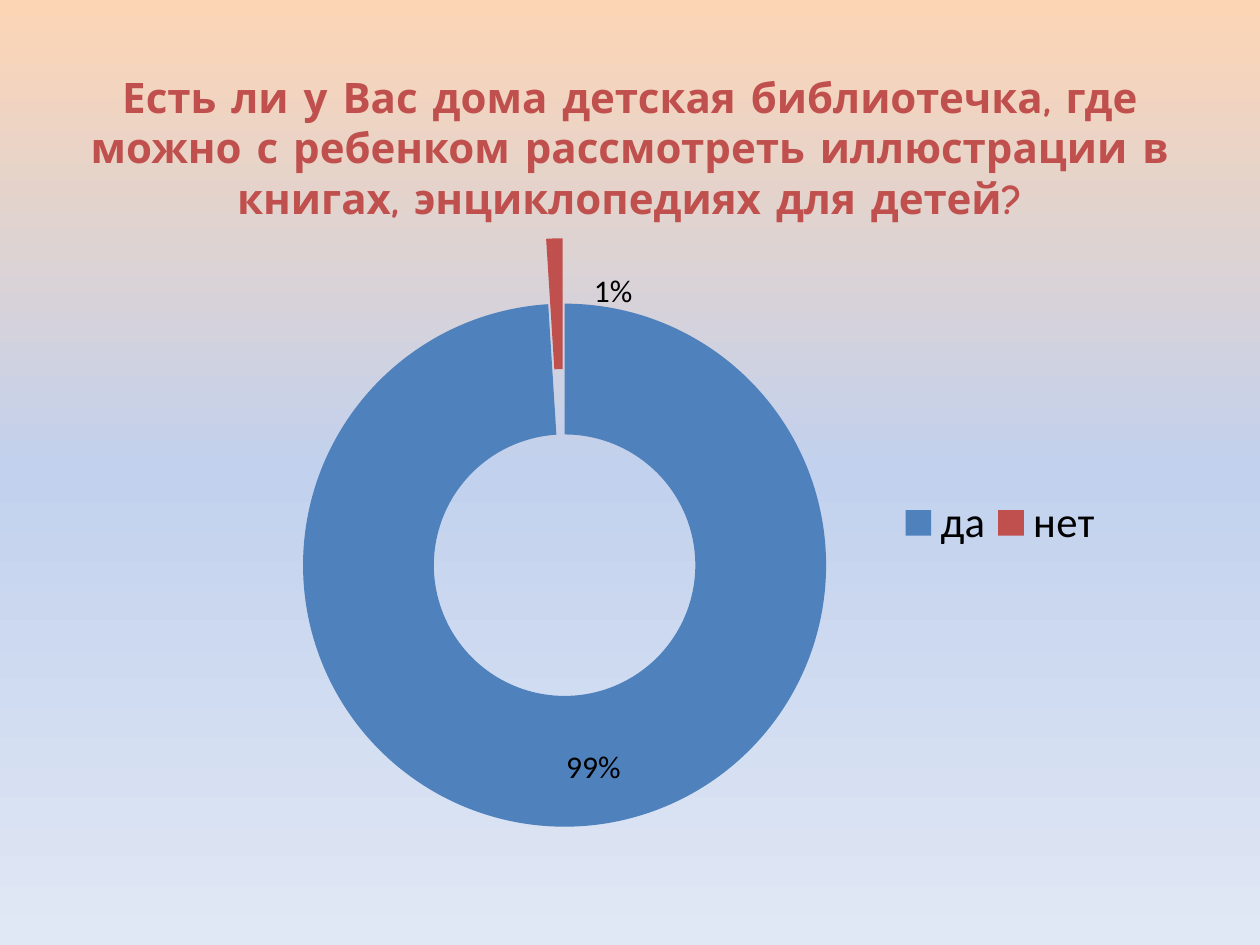
from dataclasses import dataclass
from typing import Any, NamedTuple, Optional

from lxml.etree import SubElement, _Element as Element
from pptx import Presentation
from pptx.chart.data import CategoryChartData
from pptx.dml.color import RGBColor
from pptx.enum.chart import XL_CHART_TYPE as ChartType, XL_LEGEND_POSITION as LegendPosition
from pptx.enum.text import MSO_ANCHOR as Anchor, PP_ALIGN as Align
from pptx.oxml import parse_xml
from pptx.oxml.ns import nsdecls, qn
from pptx.util import Emu, Pt

EMU_PER_PX = 914400 // 126


@dataclass(frozen=True)
class Theme:
    title_font: str = "Comic Neue"
    body_font: str = "Calibri"
    title_size: float = 24
    label_size: float = 18
    legend_size: float = 24.4
    accent: str = "C0504D"
    ink: str = "000000"
    background: tuple[tuple[int, str], ...] = (
        (0, "FCD5B5"), (50, "C2D1ED"), (100, "E1E8F5"))


class Box(NamedTuple):
    left: int
    top: int
    width: int
    height: int

    def emu(self) -> list[Emu]:
        return [Emu(side * EMU_PER_PX) for side in self]


class Answer(NamedTuple):
    name: str
    percent: int
    color: str
    label_shift: tuple[float, float]


THEME = Theme()
PAGE_SIZE = (1260, 945)
TITLE_BOX = Box(63, 38, 1134, 218)
CHART_BOX = Box(63, 220, 1134, 624)
RING_BOX = Box(269, 238, 589, 589)
LEGEND_BOX = Box(893, 494, 214, 58)
QUESTION = ("Есть ли у Вас дома детская библиотечка, где можно с ребенком "
            "рассмотреть иллюстрации в книгах, энциклопедиях для детей?")
ANSWERS = (
    Answer("да", 99, "4F81BD", (0.02, 0.01)),
    Answer("нет", 1, "C0504D", (0.05, -0.02)),
)


def set_font(font: Any, name: str, size: float, color: str, bold: bool = False) -> None:
    font.name, font.size, font.bold = name, Pt(size), bold
    font.color.rgb = RGBColor.from_string(color)


def add_text(page: Any, box: Box, text: str, *, font: str, size: float, color: str,
             bold: bool = False, align: Align = Align.CENTER) -> None:
    frame = page.shapes.add_textbox(*box.emu()).text_frame
    frame.word_wrap = True
    frame.vertical_anchor = Anchor.MIDDLE
    para = frame.paragraphs[0]
    para.alignment = align
    span = para.add_run()
    span.text = text
    set_font(span.font, font, size, color, bold)


def paint_background(page: Any, stops: tuple[tuple[int, str], ...]) -> None:
    stop_xml = "".join(
        f'<a:gs pos="{percent * 1000}"><a:srgbClr val="{color}"/></a:gs>'
        for percent, color in stops)
    page.element.cSld.insert(0, parse_xml(
        f'<p:bg {nsdecls("p", "a")}><p:bgPr><a:gradFill rotWithShape="1">'
        f'<a:gsLst>{stop_xml}</a:gsLst><a:lin ang="5400000" scaled="0"/>'
        '</a:gradFill><a:effectLst/></p:bgPr></p:bg>'))


def set_layout(parent: Element, index: int, **values: Any) -> None:
    """Give a chart part a manual layout as its child number index."""
    for old in parent.findall(qn("c:layout")):
        parent.remove(old)
    layout = parse_xml(f'<c:layout {nsdecls("c")}><c:manualLayout/></c:layout>')
    for tag, value in values.items():
        SubElement(layout[0], qn(f"c:{tag}"), val=str(value))
    parent.insert(index, layout)


def place_inside(parent: Element, index: int, box: Box, frame: Box, **target: str) -> None:
    """Fix a chart part at a box, as fractions of the chart's frame."""
    set_layout(parent, index, **target, xMode="edge", yMode="edge",
               x=round((box.left - frame.left) / frame.width, 3),
               y=round((box.top - frame.top) / frame.height, 3),
               w=round(box.width / frame.width, 3),
               h=round(box.height / frame.height, 3))


def style_answer(series: Any, index: int, answer: Answer) -> None:
    point = series.points[index]
    point.format.fill.solid()
    point.format.fill.fore_color.rgb = RGBColor.from_string(answer.color)
    set_font(point.data_label.font, THEME.body_font, THEME.label_size, THEME.ink)
    label = series.data_labels._element.findall(qn("c:dLbl"))[index]
    shift_x, shift_y = answer.label_shift
    set_layout(label, 1, x=shift_x, y=shift_y)


def add_ring_chart(page: Any, box: Box, answers: tuple[Answer, ...],
                   explosion: Optional[int] = None) -> None:
    data = CategoryChartData(number_format='0"%"')
    data.categories = [answer.name for answer in answers]
    data.add_series("Series 1", [answer.percent for answer in answers])
    chart = page.shapes.add_chart(ChartType.DOUGHNUT, *box.emu(), data).chart
    set_font(chart.font, THEME.body_font, THEME.label_size, THEME.ink)
    chart.has_title = False
    plot = chart.plots[0]
    plot.vary_by_categories = True

    series = plot.series[0]
    if explosion is not None:
        series._element.find(qn("c:tx")).addnext(
            parse_xml(f'<c:explosion {nsdecls("c")} val="{explosion}"/>'))
    series.data_labels.show_value = True
    series.data_labels.show_percentage = False
    for index, answer in enumerate(answers):
        style_answer(series, index, answer)

    chart.has_legend = True
    legend = chart.legend
    legend.position = LegendPosition.RIGHT
    legend.include_in_layout = False
    set_font(legend.font, THEME.body_font, THEME.legend_size, THEME.ink)
    place_inside(legend._element, 1, LEGEND_BOX, box)
    plot_area = chart._chartSpace.chart.plotArea
    place_inside(plot_area, 0, RING_BOX, box, layoutTarget="inner")


def main() -> None:
    deck = Presentation()
    deck.slide_width, deck.slide_height = (Emu(side * EMU_PER_PX) for side in PAGE_SIZE)
    page = deck.slides.add_slide(deck.slide_layouts[6])
    paint_background(page, THEME.background)
    add_text(page, TITLE_BOX, QUESTION, font=THEME.title_font,
             size=THEME.title_size, color=THEME.accent, bold=True)
    add_ring_chart(page, CHART_BOX, ANSWERS, explosion=25)
    deck.save("out.pptx")


if __name__ == "__main__":
    main()
